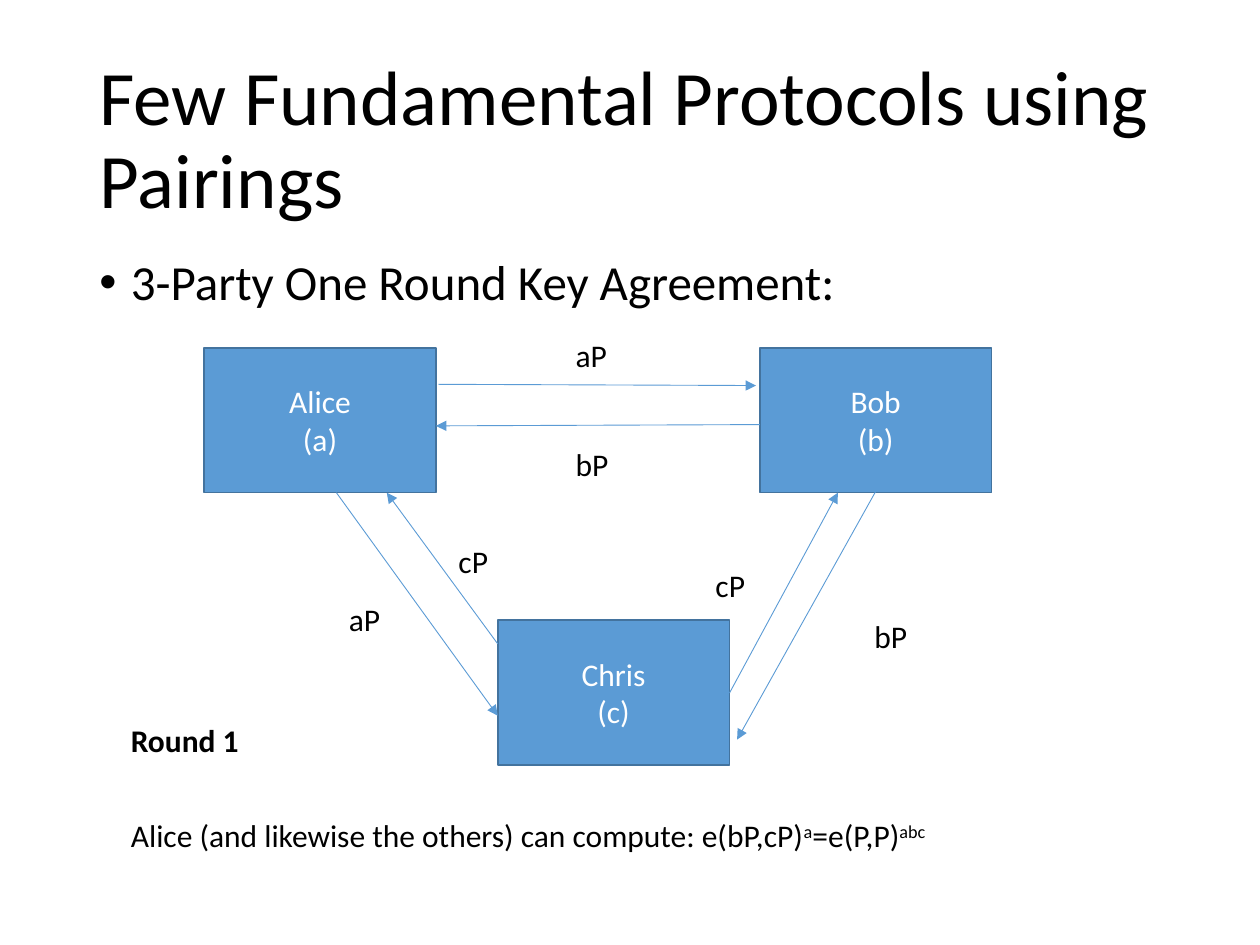
from lxml import etree
from pptx import Presentation
from pptx import util as u
from pptx.dml.color import RGBColor
from pptx.enum import shapes, text
from pptx.oxml.ns import qn

COLORS = {"ink": "000000", "paper": "FFFFFF", "box": "5B9BD5", "border": "43739E"}
COLUMNS, ROWS = 100, 75
BOX_WIDTH, BOX_HEIGHT = 18.4, 11.5


class ProtocolSlide:
    """Draws styled elements on a slide divided into 100 columns and 75 rows."""

    font = "Calibri"

    def __init__(self, presentation):
        self.cell_width = presentation.slide_width / COLUMNS
        self.cell_height = presentation.slide_height / ROWS
        self.slide = presentation.slides.add_slide(presentation.slide_layouts[5])

    def point(self, column, row):
        return round(column * self.cell_width), round(row * self.cell_height)

    def area(self, column, row, width, height):
        return *self.point(column, row), *self.point(width, height)

    def color(self, name):
        return RGBColor.from_string(COLORS[name])

    def format(self, paragraph, size, color="ink", bold=False):
        for run in paragraph.runs:
            run.font.name = self.font
            run.font.size = u.Pt(size)
            run.font.bold = bold
            run.font.color.rgb = self.color(color)

    def title(self, words, *area):
        shape = self.slide.shapes.title
        shape.left, shape.top, shape.width, shape.height = self.area(*area)
        frame = shape.text_frame
        frame.text = words
        frame.word_wrap = True
        frame.auto_size = text.MSO_AUTO_SIZE.NONE
        frame.vertical_anchor = text.MSO_ANCHOR.MIDDLE
        paragraph = frame.paragraphs[0]
        paragraph.alignment = text.PP_ALIGN.LEFT
        paragraph.line_spacing = 0.9
        self.format(paragraph, 44)

    def label(self, words, *area, size=18, bold=False):
        shape = self.slide.shapes.add_textbox(*self.area(*area))
        shape.text_frame.word_wrap = True
        paragraph = shape.text_frame.paragraphs[0]
        paragraph.text = words
        self.format(paragraph, size, bold=bold)
        return paragraph

    def bullet(self, words, *area):
        paragraph = self.label(words, *area, size=28)
        paragraph.line_spacing = 0.9
        paragraph.space_before = u.Pt(10)
        properties = paragraph._p.get_or_add_pPr()
        properties.set("marL", str(u.Inches(0.25)))
        properties.set("indent", str(u.Inches(-0.25)))
        etree.SubElement(properties, qn("a:buFont"), typeface="Arial")
        etree.SubElement(properties, qn("a:buChar"), char="•")

    def formula(self, parts, *area):
        paragraph = self.label("", *area)
        for words, raised in parts:
            run = paragraph.add_run()
            run.text = words
            if raised:
                run.font._element.set("baseline", "30000")
        self.format(paragraph, 18)

    def party(self, words, column, row):
        shape = self.slide.shapes.add_shape(
            shapes.MSO_SHAPE.RECTANGLE, *self.area(column, row, BOX_WIDTH, BOX_HEIGHT))
        shape.shadow.inherit = False
        shape.fill.solid()
        shape.fill.fore_color.rgb = self.color("box")
        shape.line.color.rgb = self.color("border")
        shape.line.width = u.Pt(1)
        frame = shape.text_frame
        frame.text = words
        frame.vertical_anchor = text.MSO_ANCHOR.MIDDLE
        for paragraph in frame.paragraphs:
            paragraph.alignment = text.PP_ALIGN.CENTER
            self.format(paragraph, 18, "paper")

    def arrow(self, start, end):
        connector = self.slide.shapes.add_connector(
            shapes.MSO_CONNECTOR.STRAIGHT, *self.point(*start), *self.point(*end))
        connector.line.color.rgb = self.color("box")
        connector.line.width = u.Pt(0.5)
        etree.SubElement(connector.line._get_or_add_ln(), qn("a:tailEnd"), type="triangle")
        etree.SubElement(connector._element.spPr, qn("a:effectLst"))


def main():
    presentation = Presentation()
    presentation.slide_width, presentation.slide_height = u.Inches(10), u.Inches(7.5)
    slide = ProtocolSlide(presentation)

    slide.title("Few Fundamental Protocols using Pairings", 6.9, 4, 86.2, 14.5)
    slide.bullet("3-Party One Round Key Agreement:", 6.9, 20, 86.2, 6)

    parties = [("Alice\n(a)", 16.2, 27.6), ("Bob\n(b)", 60.3, 27.6), ("Chris\n(c)", 39.5, 49.2)]
    for party in parties:
        slide.party(*party)

    messages = [
        ("aP", (44.7, 26.2), (34.8, 30.5), (60, 30.6)),
        ("bP", (44.7, 34.8), (60.3, 33.7), (34.6, 33.8)),
        ("aP", (26.7, 47.1), (26.7, 39.1), (39.5, 56.8)),
        ("cP", (35.4, 42.5), (39.5, 51.1), (30.7, 39.1)),
        ("cP", (55.8, 44.4), (57.9, 55), (66.5, 39.1)),
        ("bP", (68.4, 48.5), (69.5, 39), (58.5, 58.7)),
    ]
    for words, place, start, end in messages:
        slide.arrow(start, end)
        slide.label(words, *place, 13.8, 4)

    slide.label("Round 1", 9.4, 56.7, 16.3, 4, bold=True)
    slide.formula(
        [("Alice (and likewise the others) can compute: e(bP,cP)", False), ("a", True),
         ("=e(P,P)", False), ("abc", True)],
        9.4, 64.3, 65.8, 4)
    presentation.save("out.pptx")


if __name__ == "__main__":
    main()
